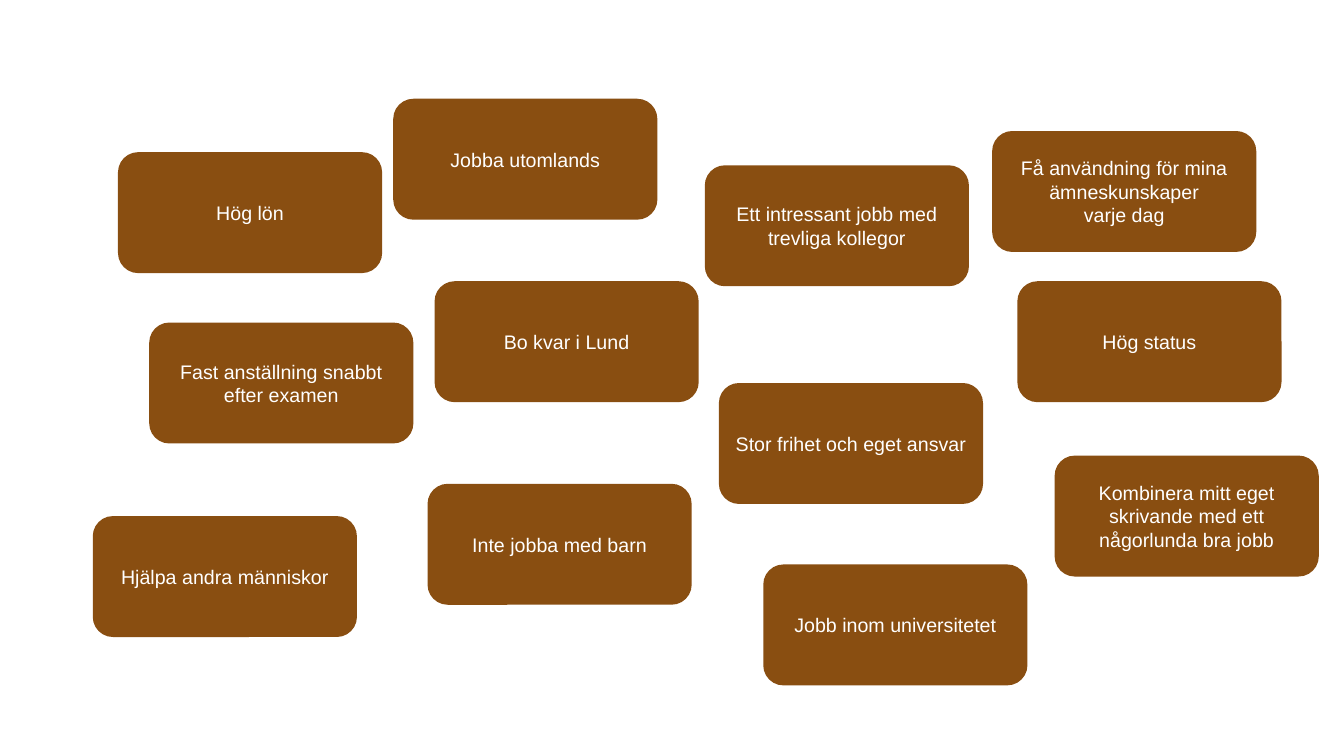
from pptx import Presentation
from pptx import util as u
from pptx.dml.color import RGBColor
from pptx.enum import shapes, text

PX = u.Inches(1) // 100
COLOURS = {"card": "894E11", "label": "FFFFFF"}
CARD_WIDTH, CARD_HEIGHT = 262, 120

WISHES = [
    (148, 320, "Fast anställning snabbt efter examen"),
    (117, 151, "Hög lön"),
    (92, 512, "Hjälpa andra människor"),
    (713, 380, "Stor frihet och eget ansvar"),
    (1009, 279, "Hög status"),
    (431, 279, "Bo kvar i Lund"),
    (424, 480, "Inte jobba med barn"),
    (390, 98, "Jobba utomlands"),
    (699, 164, "Ett intressant jobb med trevliga kollegor"),
    (757, 560, "Jobb inom universitetet"),
    (984, 130, "Få användning för mina ämneskunskaper\nvarje dag"),
    (1046, 452, "Kombinera mitt eget skrivande med ett någorlunda bra jobb"),
]


def colour(name):
    return RGBColor.from_string(COLOURS[name])


def write(frame, wording, size=14, font="Arial", fill="label",
          align=text.PP_ALIGN.CENTER, anchor=text.MSO_ANCHOR.MIDDLE):
    frame.word_wrap = True
    frame.vertical_anchor = anchor
    frame.text = wording
    for para in frame.paragraphs:
        para.alignment = align
        for span in para.runs:
            span.font.size = u.Pt(size)
            span.font.name = font
            span.font.color.rgb = colour(fill)


def add_card(page, box, wording):
    card = page.shapes.add_shape(
        shapes.MSO_SHAPE.ROUNDED_RECTANGLE, *(side * PX for side in box))
    card.shadow.inherit = False
    card.fill.solid()
    card.fill.fore_color.rgb = colour("card")
    card.line.fill.background()
    write(card.text_frame, wording)


def add_wishes_page(deck):
    page = deck.slides.add_slide(deck.slide_layouts[6])
    for left, top, wording in WISHES:
        add_card(page, (left, top, CARD_WIDTH, CARD_HEIGHT), wording)


def main():
    deck = Presentation()
    deck.slide_width, deck.slide_height = 1333 * PX, 750 * PX
    add_wishes_page(deck)
    deck.save("out.pptx")


if __name__ == "__main__":
    main()
